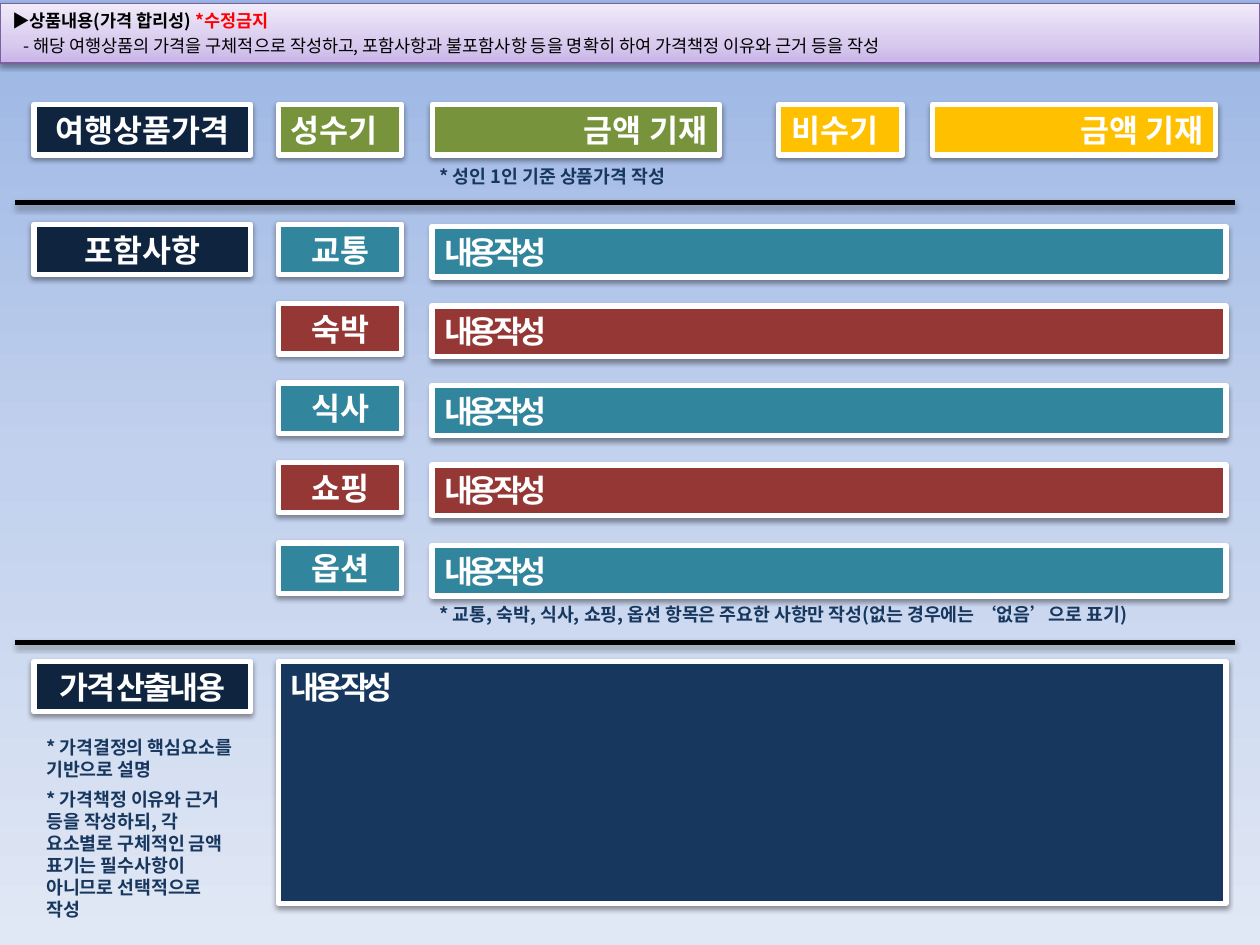
from dataclasses import dataclass

from lxml import etree
from pptx import Presentation
from pptx.dml.color import RGBColor
from pptx.enum.shapes import MSO_CONNECTOR, MSO_SHAPE
from pptx.enum.text import MSO_ANCHOR, PP_ALIGN
from pptx.oxml.ns import qn
from pptx.util import Emu, Pt

RECTANGLE = MSO_SHAPE.RECTANGLE
STRAIGHT = MSO_CONNECTOR.STRAIGHT
TOP, MIDDLE = MSO_ANCHOR.TOP, MSO_ANCHOR.MIDDLE
LEFT, CENTER = PP_ALIGN.LEFT, PP_ALIGN.CENTER
RIGHT, JUSTIFY = PP_ALIGN.RIGHT, PP_ALIGN.JUSTIFY

EMU_PER_PX = 9144  # 100 px to the inch


@dataclass(frozen=True)
class Theme:
    font: str = "Noto Sans CJK KR"
    title_size: float = 18
    note_size: float = 10.5
    header_size: float = 10
    white: str = "FFFFFF"
    black: str = "000000"
    red: str = "FF0000"
    navy: str = "0F243E"
    blue: str = "17375E"
    green: str = "77933C"
    amber: str = "FFC000"
    teal: str = "31859C"
    brick: str = "953735"
    header_line: str = "7D60A0"
    header_stops: tuple = ((0, "C9B5E8"), (35, "D8CBEE"), (100, "F0EAF9"))
    background_stops: tuple = ((0, "9AB5E4"), (50, "C2D1ED"), (100, "E1E8F5"))


THEME = Theme()


@dataclass(frozen=True)
class Box:
    left: int
    top: int
    width: int
    height: int

    def inside(self, left, top, width, height):
        return Box(self.left + left, self.top + top, width, height)

    def emu(self):
        return [px(n) for n in (self.left, self.top, self.width, self.height)]


def px(length):
    return Emu(length * EMU_PER_PX)


def rgb(color):
    return RGBColor.from_string(color)


def add_text(frame, text, *, size=THEME.title_size, color=THEME.white, bold=True,
             align=LEFT, spacing=0, before=0, indent=0, same_line=False):
    paragraph = frame.paragraphs[-1]
    if paragraph.runs and not same_line:
        paragraph = frame.add_paragraph()
    if not same_line:
        paragraph.alignment = align
        paragraph.space_before = Pt(before)
        if indent:
            paragraph._p.get_or_add_pPr().set("marL", str(px(indent)))
    run = paragraph.add_run()
    run.text = text
    run.font.size, run.font.bold = Pt(size), bold
    run.font.name = THEME.font
    run.font.color.rgb = rgb(color)
    properties = run._r.get_or_add_rPr()
    etree.SubElement(properties, qn("a:ea"), typeface=THEME.font)
    if spacing:
        properties.set("spc", str(int(spacing * 100)))


def set_gradient(fill, owner, stops, angle):
    fill.gradient()
    gradient = owner.xpath(".//a:gradFill")[0]
    stop_list = gradient.find(qn("a:gsLst"))
    stop_list.clear()
    for position, color in stops:
        stop = etree.SubElement(stop_list, qn("a:gs"), pos=str(position * 1000))
        etree.SubElement(stop, qn("a:srgbClr"), val=color)
    gradient.find(qn("a:lin")).set("ang", str(angle * 60000))


def add_shadow(shape, opacity=38, distance=1.6):
    # Call after the line is set: effects follow it in the XML.
    effects = etree.SubElement(shape._element.spPr, qn("a:effectLst"))
    shadow = etree.SubElement(effects, qn("a:outerShdw"), blurRad=str(Pt(3.1)),
                              dist=str(Pt(distance)), dir="5400000", rotWithShape="0")
    color = etree.SubElement(shadow, qn("a:srgbClr"), val=THEME.black)
    etree.SubElement(color, qn("a:alpha"), val=str(opacity * 1000))


def add_panel(slide, box, fill, *, line=THEME.white, line_width=3, anchor=MIDDLE):
    shape = slide.shapes.add_shape(RECTANGLE, *box.emu())
    if isinstance(fill, str):
        shape.fill.solid()
        shape.fill.fore_color.rgb = rgb(fill)
    else:
        set_gradient(shape.fill, shape._element, fill, 270)
    shape.line.color.rgb = rgb(line)
    shape.line.width = Pt(line_width)
    add_shadow(shape)
    shape.text_frame.word_wrap = True
    shape.text_frame.vertical_anchor = anchor
    return shape.text_frame


def add_tile(slide, box, text, fill, *, anchor=MIDDLE, **text_format):
    add_text(add_panel(slide, box, fill, anchor=anchor), text, **text_format)


def add_notes(slide, box, *notes):
    frame = slide.shapes.add_textbox(*box.emu()).text_frame
    frame.word_wrap = True
    for index, note in enumerate(notes):
        add_text(frame, note, size=THEME.note_size, color=THEME.blue,
                 before=4.8 if index else 0)


def add_divider(slide, top):
    divider = slide.shapes.add_connector(STRAIGHT, px(12), px(top), px(980), px(top))
    divider.line.color.rgb = rgb(THEME.black)
    divider.line.width = Pt(3)
    add_shadow(divider, opacity=35, distance=1.8)


def add_header(slide, box):
    frame = add_panel(slide, box, THEME.header_stops,
                      line=THEME.header_line, line_width=0.75)
    size = THEME.header_size
    add_text(frame, "▶상품내용(가격 합리성) ", size=size, color=THEME.black)
    add_text(frame, "*수정금지", size=size, color=THEME.red, same_line=True)
    add_text(frame, "- 해당 여행상품의 가격을 구체적으로 작성하고, 포함사항과 불포함사항 등을 "
             "명확히 하여 가격책정 이유와 근거 등을 작성",
             size=size, color=THEME.black, bold=False, before=2.4, indent=9)


def add_prices(slide, box):
    add_tile(slide, box.inside(0, 0, 172, 40), "여행상품가격", THEME.navy, align=CENTER)
    seasons = (("성수기", THEME.green, 194, 316, 228),
               ("비수기", THEME.amber, 591, 713, 225))
    for season, color, label_left, price_left, price_width in seasons:
        add_tile(slide, box.inside(label_left, 0, 98, 40), season, color)
        add_tile(slide, box.inside(price_left, 0, price_width, 40), "금액 기재", color,
                 align=RIGHT)
    add_notes(slide, box.inside(312, 43, 229, 28), "* 성인 1인 기준 상품가격 작성")


def add_inclusions(slide, box):
    add_tile(slide, box.inside(0, 0, 172, 40), "포함사항", THEME.navy, align=CENTER)
    for index, item in enumerate(("교통", "숙박", "식사", "쇼핑", "옵션")):
        top = 253 * index // 4
        color = THEME.brick if index % 2 else THEME.teal
        add_tile(slide, box.inside(194, top, 98, 40), item, color, align=CENTER)
        add_tile(slide, box.inside(316, top + 2, 630, 40), "내용 작성", color,
                 align=JUSTIFY, spacing=-3)
    add_notes(slide, box.inside(312, 296, 610, 28),
              "* 교통, 숙박, 식사, 쇼핑, 옵션 항목은 주요한 사항만 작성"
              "(없는 경우에는 ‘없음’으로 표기)")


def add_calculation(slide, box):
    add_tile(slide, box.inside(0, 0, 172, 40), "가격 산출내용", THEME.navy,
             align=CENTER, spacing=-1.5)
    add_notes(slide, box.inside(0, 54, 172, 158),
              "* 가격결정의 핵심요소를 기반으로 설명",
              "* 가격책정 이유와 근거 등을 작성하되, 각 요소별로 구체적인 금액 표기는 "
              "필수사항이 아니므로 선택적으로 작성")
    add_tile(slide, box.inside(194, 0, 752, 192), "내용 작성", THEME.blue,
             anchor=TOP, align=JUSTIFY, spacing=-3)


def main():
    presentation = Presentation()
    presentation.slide_width, presentation.slide_height = px(1000), px(750)
    slide = presentation.slides.add_slide(presentation.slide_layouts[6])
    set_gradient(slide.background.fill, slide._element, THEME.background_stops, 90)

    add_header(slide, Box(0, 3, 1000, 47))
    add_prices(slide, Box(27, 83, 938, 71))
    add_divider(slide, 161)
    add_inclusions(slide, Box(27, 178, 946, 324))
    add_divider(slide, 510)
    add_calculation(slide, Box(27, 525, 946, 212))

    presentation.save("out.pptx")


if __name__ == "__main__":
    main()
